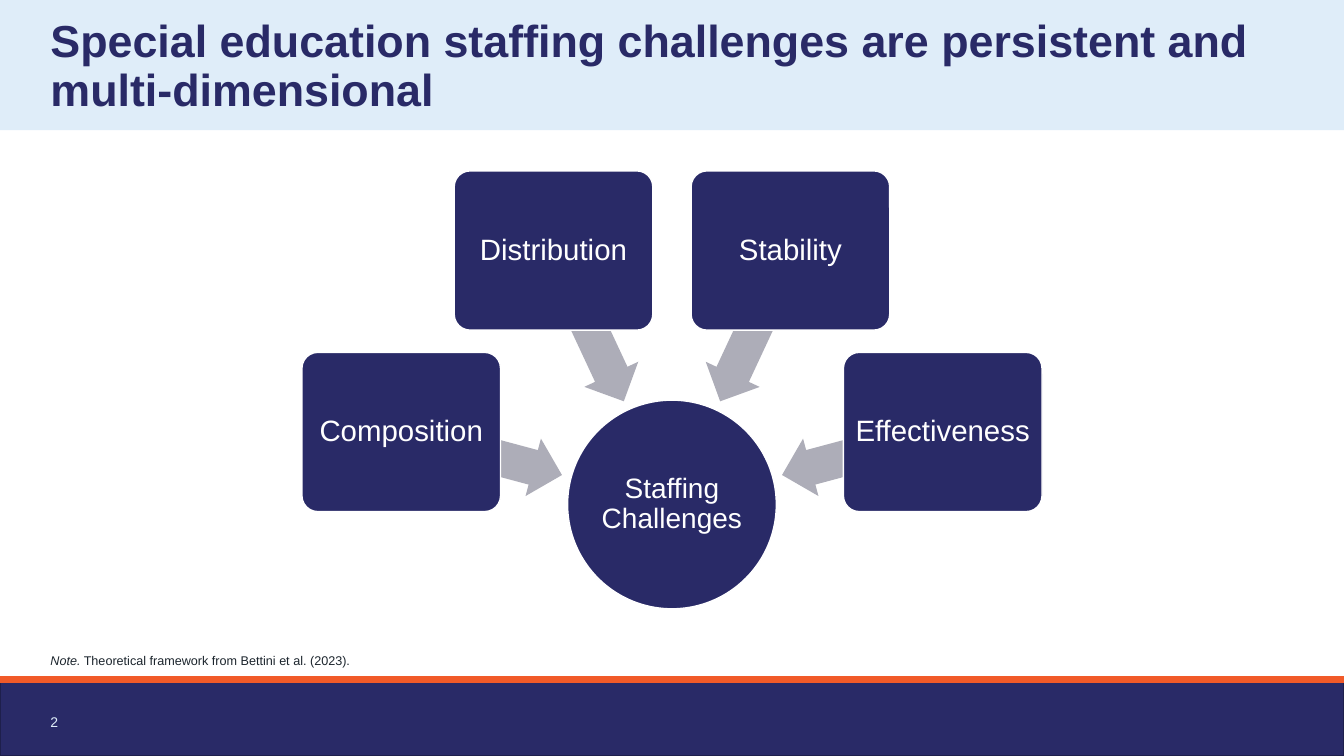
import math
import pptx
import pptx.util
import pptx.dml.color
import pptx.enum.shapes
import pptx.enum.text
import pptx.oxml.ns
from lxml import etree

Inches = pptx.util.Inches
Pt = pptx.util.Pt
MSO = pptx.enum.shapes.MSO_SHAPE
ANCHOR = pptx.enum.text.MSO_ANCHOR
ALIGN = pptx.enum.text.PP_ALIGN
qn = pptx.oxml.ns.qn

NAVY, PALE, ORANGE, GREY, WHITE, INK = "292A67", "DFEDF9", "F15A29", "ADADB8", "FFFFFF", "1C252D"


def rgb(value):
    return pptx.dml.color.RGBColor.from_string(value)


def write(tf, *texts, size, color, bold=False, italics=(), align=ALIGN.LEFT,
          anchor=ANCHOR.BOTTOM, spacing=1, margins=(0, 0), wrap=True):
    tf.auto_size = pptx.enum.text.MSO_AUTO_SIZE.NONE
    tf.word_wrap = wrap
    tf.vertical_anchor = anchor
    tf.margin_left = tf.margin_right = Inches(margins[0])
    tf.margin_top = tf.margin_bottom = Inches(margins[1])
    p = tf.paragraphs[0]
    p.alignment = align
    p.line_spacing = spacing
    p.space_before = Pt(0)
    for text in texts:
        r = p.add_run()
        r.text = text
        r.font.name = "Arial"
        r.font.size = Pt(size)
        r.font.bold = bold
        r.font.italic = text in italics
        r.font.color.rgb = rgb(color)
    return p


prs = pptx.Presentation()
prs.slide_width, prs.slide_height = Inches(13.33), Inches(7.5)
W, H = 13.33, 7.5
MARGIN, FOOT = 0.5, 6.74
s = prs.slides.add_slide(prs.slide_layouts[1])
title, note = s.placeholders

for sp, top, height in ((title, 0.1, 1.05), (note, 6.35, 0.28)):
    sp.left, sp.top = Inches(MARGIN), Inches(top)
    sp.width, sp.height = Inches(W - 2 * MARGIN), Inches(height)

write(title.text_frame, "Special education staffing challenges are persistent and multi-dimensional",
      size=32, color=NAVY, bold=True, spacing=0.9)
p = write(note.text_frame, "Note.", " Theoretical framework from Bettini et al. (2023).",
          size=9, color=INK, italics=("Note.",), spacing=1.25)
pPr = p._p.get_or_add_pPr()
pPr.set("marL", "0")
pPr.set("indent", "0")
etree.SubElement(pPr, qn("a:buNone"))

bands = ((FOOT, H - FOOT, NAVY, "1E1F4C"), (0, 1.29, PALE, None))
for i, (top, height, fill, line) in enumerate(bands):
    sp = s.shapes.add_shape(MSO.RECTANGLE, 0, Inches(top), prs.slide_width, Inches(height))
    sp.shadow.inherit = False
    sp.fill.solid()
    sp.fill.fore_color.rgb = rgb(fill)
    if line:
        sp.line.color.rgb = rgb(line)
        sp.line.width = Pt(1)
    else:
        sp.line.fill.background()
    s.shapes.element.insert(2 + i, sp.element)

rule = s.shapes.add_connector(pptx.enum.shapes.MSO_CONNECTOR.STRAIGHT,
                              0, Inches(FOOT), prs.slide_width, Inches(FOOT))
rule.line.color.rgb = rgb(ORANGE)
rule.line.width = Pt(4.5)
etree.SubElement(rule.element.spPr, qn("a:effectLst"))

number = s.shapes.add_textbox(Inches(MARGIN), Inches(7.02), Inches(0.27), Inches(0.27))
write(number.text_frame, "2", size=10, color=PALE, margins=(0, 0.05), wrap=False)

HUB_X, HUB_Y = W / 2, 5.005
ARROW_RADIUS, BOX_RADIUS = 1.955, 2.78
parts = [(MSO.OVAL, 0, 0, 2.07, 2.07, "Staffing Challenges", 20, 0.01)]
for i, label in enumerate(("Composition", "Distribution", "Stability", "Effectiveness")):
    angle = 195 + 50 * i
    parts += [(MSO.LEFT_ARROW, angle, ARROW_RADIUS, 1.65, 0.59, None, None, None),
              (MSO.ROUNDED_RECTANGLE, angle, BOX_RADIUS, 1.97, 1.58, label, 21, 0.04)]

for kind, angle, radius, width, height, label, size, inset in parts:
    x = HUB_X + radius * math.cos(math.radians(angle)) - width / 2
    y = HUB_Y + radius * math.sin(math.radians(angle)) - height / 2
    sp = s.shapes.add_shape(kind, Inches(x), Inches(y), Inches(width), Inches(height))
    sp.shadow.inherit = False
    sp.fill.solid()
    if label:
        sp.fill.fore_color.rgb = rgb(NAVY)
        sp.line.color.rgb = rgb(WHITE)
        sp.line.width = Pt(1)
        write(sp.text_frame, label, size=size, color=WHITE, align=ALIGN.CENTER,
              anchor=ANCHOR.MIDDLE, spacing=0.9, margins=(inset, inset))
    else:
        sp.fill.fore_color.rgb = rgb(GREY)
        sp.line.fill.background()
        sp.rotation = angle
        sp.adjustments[0], sp.adjustments[1] = 0.6, 0.5
    if kind == MSO.ROUNDED_RECTANGLE:
        sp.adjustments[0] = 0.1

prs.save("out.pptx")
